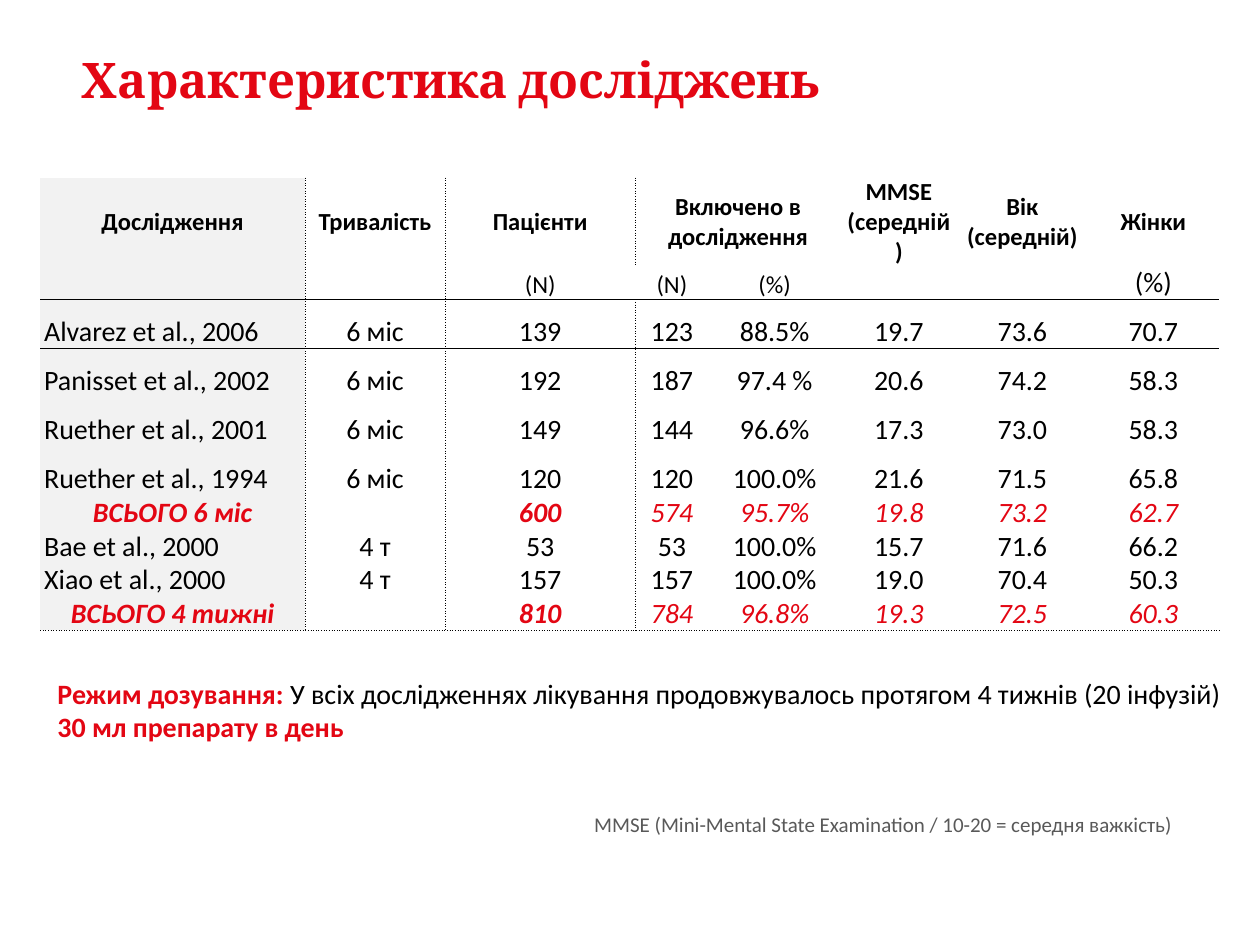
"""Build a slide that compares the characteristics of clinical studies."""
from dataclasses import dataclass

from lxml.etree import SubElement
from pptx import Presentation
from pptx.dml.color import RGBColor as Rgb
from pptx.enum.text import MSO_ANCHOR as Anchor, PP_ALIGN as Align
from pptx.oxml.ns import qn
from pptx.util import Cm, Pt


@dataclass(frozen=True)
class Theme:
    red: str = "E30613"
    black: str = "000000"
    grey: str = "595959"
    shade: str = "F2F2F2"
    heading_font: str = "Cambria"
    body_font: str = "Calibri"
    title: int = 28
    body: int = 16
    header: int = 14
    note: int = 12
    rule: float = 0.25
    plain_table: str = "{2D5ABB26-0587-4C30-8999-92F81FD0307C}"


THEME = Theme()
COLUMN_WIDTHS = [5.34, 2.82, 3.84, 1.47, 2.67, 2.34, 2.64, 2.64]
ROW_HEIGHTS = [1.78, 0.66] + [0.99] * 4 + [0.66] * 4
HEADINGS = ["Дослідження", "Тривалість", "Пацієнти", "Включено в дослідження", "",
            "MMSE\n(середній)", "Вік (середній)", "Жінки"]
UNITS = ["", "", "(N)", "(N)", "(%)", "", "", "(%)"]
STUDIES = [
    ["Alvarez et al., 2006", "6 міс", "139", "123", "88.5%", "19.7", "73.6", "70.7"],
    ["Panisset et al., 2002", "6 міс", "192", "187", "97.4 %", "20.6", "74.2", "58.3"],
    ["Ruether et al., 2001", "6 міс", "149", "144", "96.6%", "17.3", "73.0", "58.3"],
    ["Ruether et al., 1994", "6 міс", "120", "120", "100.0%", "21.6", "71.5", "65.8"],
    ["ВСЬОГО 6 міс", "", "600", "574", "95.7%", "19.8", "73.2", "62.7"],
    ["Bae et al., 2000", "4 т", "53", "53", "100.0%", "15.7", "71.6", "66.2"],
    ["Xiao et al., 2000", "4 т", "157", "157", "100.0%", "19.0", "70.4", "50.3"],
    ["ВСЬОГО 4 тижні", "", "810", "784", "96.8%", "19.3", "72.5", "60.3"],
]


def style_font(font, size, color, bold=False, italic=False, name=THEME.body_font):
    font.name, font.size = name, Pt(size)
    font.bold, font.italic = bold, italic
    font.color.rgb = Rgb.from_string(color)


def add_text_frame(slide, left, top, width, height, anchor=Anchor.TOP):
    frame = slide.shapes.add_textbox(Cm(left), Cm(top), Cm(width), Cm(height)).text_frame
    frame.word_wrap = True
    frame.vertical_anchor = anchor
    return frame


def add_title(slide):
    frame = add_text_frame(slide, 1.4, 0, 22.6, 3.18, Anchor.MIDDLE)
    frame.text = "Характеристика досліджень"
    style_font(frame.paragraphs[0].runs[0].font, THEME.title, THEME.red, True,
               name=THEME.heading_font)


def add_dosing(slide):
    frame = add_text_frame(slide, 0.91, 13.51, 24.49, 4.22)
    regimen = frame.paragraphs[0]
    for wording, color, bold in [
        ("Режим дозування: ", THEME.red, True),
        ("У всіх дослідженнях лікування продовжувалось протягом 4 тижнів (20 інфузій) ",
         THEME.black, False),
        ("30 мл препарату в день", THEME.red, True),
    ]:
        part = regimen.add_run()
        part.text = wording
        style_font(part.font, THEME.body, color, bold)
    scale_note = frame.add_paragraph()
    scale_note.text = "MMSE (Mini-Mental State Examination / 10-20 = середня важкість)"
    scale_note.space_before = Pt(39)
    scale_note._p.get_or_add_pPr().set("marL", str(Cm(10.82)))
    style_font(scale_note.runs[0].font, THEME.note, THEME.grey)


def add_border(cell, side, dash):
    line = SubElement(cell._tc.get_or_add_tcPr(), qn(f"a:ln{side}"), w=str(Pt(THEME.rule)))
    paint = SubElement(line, qn("a:solidFill"))
    SubElement(paint, qn("a:srgbClr"), val=THEME.black)
    SubElement(line, qn("a:prstDash"), val=dash)


def find_borders(row, column):
    """Return the sides and dashes of a cell, in the order the file format needs."""
    duration_edge = row != 1
    rules = [
        ("L", "sysDot", column == 1 or column == 2 and duration_edge),
        ("R", "sysDot", column == 0 or column == 1 and duration_edge),
        ("T", "solid", row == 2),
        ("B", "solid", row == 1),
        ("B", "sysDot", row == len(ROW_HEIGHTS) - 1),
    ]
    return [(side, dash) for side, dash, applies in rules if applies]


def fill_cell(cell, wording, row, column):
    is_total = row > 1 and wording != "" and STUDIES[row - 2][0].startswith("ВСЬОГО")
    is_unit_of_women = row == 1 and column == len(UNITS) - 1
    size = THEME.body if row > 1 or is_unit_of_women else THEME.header
    bold = row == 0 or is_total and column in (0, 2)
    is_study_name = row > 1 and column == 0 and not is_total
    cell.text = wording
    cell.margin_left = cell.margin_right = Cm(0.08)
    cell.margin_top = cell.margin_bottom = 0
    cell.vertical_anchor = Anchor.MIDDLE if row == 0 else Anchor.BOTTOM
    for paragraph in cell.text_frame.paragraphs:
        paragraph.alignment = Align.LEFT if is_study_name else Align.CENTER
        for run in paragraph.runs:
            style_font(run.font, size, THEME.red if is_total else THEME.black, bold, is_total)
        if not paragraph.runs:
            SubElement(paragraph._p, qn("a:endParaRPr"), sz=str(THEME.header * 100))
    for side, dash in find_borders(row, column):
        add_border(cell, side, dash)
    if column == 0:
        cell.fill.solid()
        cell.fill.fore_color.rgb = Rgb.from_string(THEME.shade)
    else:
        cell.fill.background()


def add_studies_table(slide):
    frame = slide.shapes.add_table(
        len(ROW_HEIGHTS), len(COLUMN_WIDTHS), Cm(0.81), Cm(3.58),
        Cm(sum(COLUMN_WIDTHS)), Cm(sum(ROW_HEIGHTS)))
    studies = frame.table
    studies.first_row = studies.horz_banding = False
    studies._tbl.tblPr.find(qn("a:tableStyleId")).text = THEME.plain_table
    for column, width in zip(studies.columns, COLUMN_WIDTHS):
        column.width = Cm(width)
    for row, height in zip(studies.rows, ROW_HEIGHTS):
        row.height = Cm(height)
    for row, entries in enumerate([HEADINGS, UNITS, *STUDIES]):
        for column, wording in enumerate(entries):
            fill_cell(studies.cell(row, column), wording, row, column)
    studies.cell(0, 3).merge(studies.cell(0, 4))


def main():
    deck = Presentation()
    deck.slide_width, deck.slide_height = Cm(25.4), Cm(19.05)
    slide = deck.slides.add_slide(deck.slide_layouts[6])
    add_title(slide)
    add_dosing(slide)
    add_studies_table(slide)
    deck.save("out.pptx")


if __name__ == "__main__":
    main()
